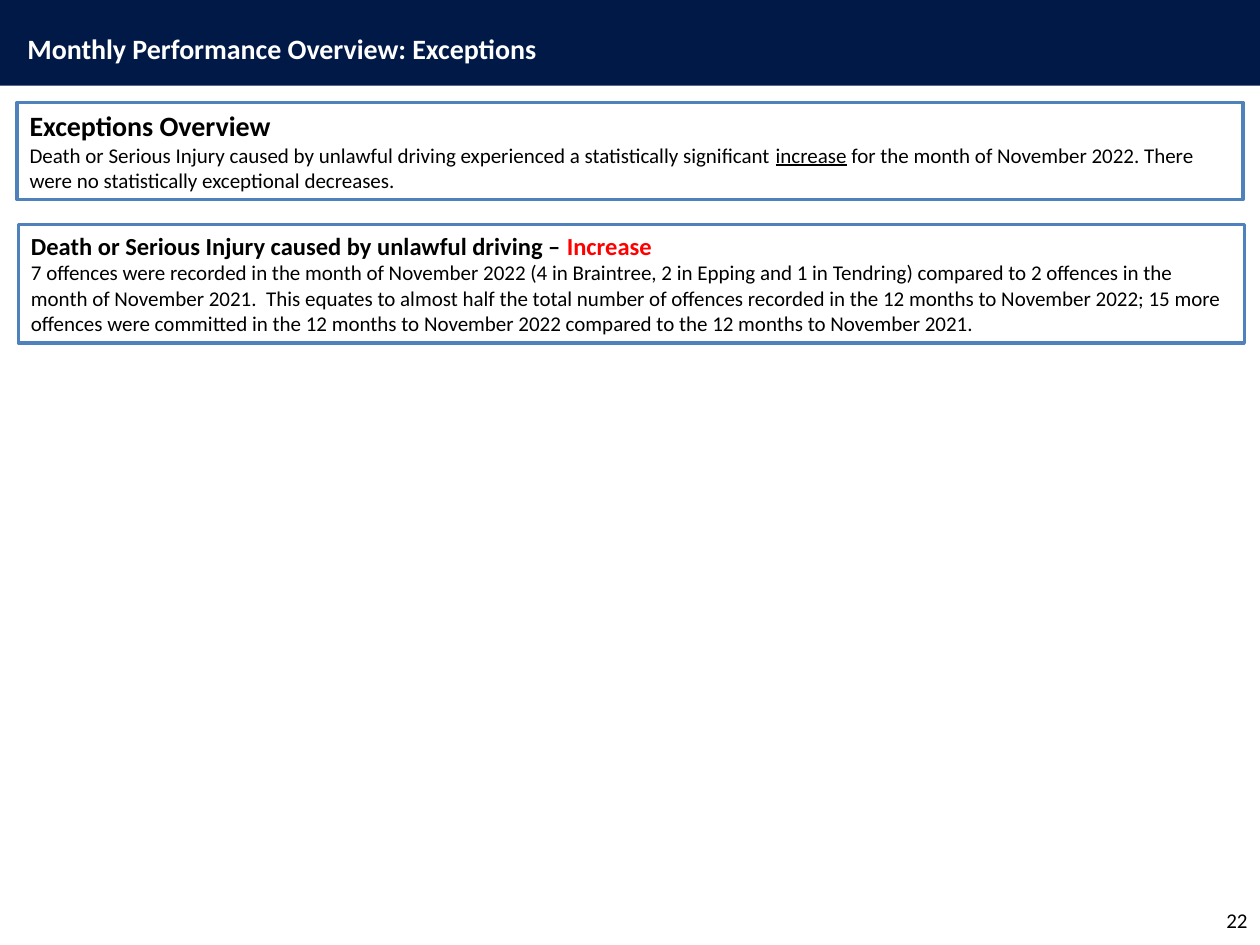
from dataclasses import dataclass

from pptx import Presentation
from pptx.dml.color import RGBColor
from pptx.enum.shapes import MSO_SHAPE
from pptx.enum.text import MSO_ANCHOR, PP_ALIGN
from pptx.util import Pt

RECT = MSO_SHAPE.RECTANGLE
TOP, MIDDLE = MSO_ANCHOR.TOP, MSO_ANCHOR.MIDDLE
LEFT, RIGHT = PP_ALIGN.LEFT, PP_ALIGN.RIGHT


@dataclass(frozen=True)
class Theme:
    font: str = "Calibri"
    navy: RGBColor = RGBColor(0x00, 0x19, 0x47)
    border: RGBColor = RGBColor(0x4F, 0x81, 0xBD)
    white: RGBColor = RGBColor(0xFF, 0xFF, 0xFF)
    black: RGBColor = RGBColor(0x00, 0x00, 0x00)
    red: RGBColor = RGBColor(0xFF, 0x00, 0x00)
    title: int = 16
    heading: int = 14
    body: int = 12
    border_width: int = 2


THEME = Theme()


def write(shape, paragraphs, align=LEFT, anchor=TOP):
    """Fill a shape with paragraphs, each a list of (text, size, format) runs."""
    tf = shape.text_frame
    tf.word_wrap = True
    tf.vertical_anchor = anchor
    for i, runs in enumerate(paragraphs):
        p = tf.paragraphs[0] if i == 0 else tf.add_paragraph()
        p.alignment = align
        for text, size, fmt in runs:
            r = p.add_run()
            r.text = text
            values = {"name": THEME.font, "size": Pt(size), "bold": False} | fmt
            r.font.color.rgb = values.pop("color", THEME.black)
            for name, value in values.items():
                setattr(r.font, name, value)


def add_rect(s, box, fill, line=None):
    sp = s.shapes.add_shape(RECT, *map(Pt, box))
    sp.shadow.inherit = False
    sp.fill.solid()
    sp.fill.fore_color.rgb = fill
    if line is None:
        sp.line.fill.background()
    else:
        sp.line.color.rgb = line
        sp.line.width = Pt(THEME.border_width)
    return sp


def add_text(s, box, paragraphs, **layout):
    write(s.shapes.add_textbox(*map(Pt, box)), paragraphs, **layout)


def add_panel(s, box, paragraphs):
    write(add_rect(s, box, THEME.white, THEME.border), paragraphs)


def main():
    prs = Presentation()
    prs.slide_width, prs.slide_height = Pt(720), Pt(540)
    s = prs.slides.add_slide(prs.slide_layouts[6])
    t = THEME
    bold = {"bold": True}

    add_rect(s, (0, -5, 720, 54), t.navy)
    add_text(s, (8.6, 14.4, 408, 26.6), [
        [("Monthly Performance Overview: Exceptions", t.title,
          bold | {"color": t.white})],
    ])
    add_text(s, (552, 511, 168, 29), [[("22", t.body, {})]],
             align=RIGHT, anchor=MIDDLE)

    add_panel(s, (9.8, 58.5, 700.5, 55.6), [
        [("Exceptions Overview", t.title, bold)],
        [("Death or Serious Injury caused by unlawful driving experienced a "
          "statistically significant ", t.body, {}),
         ("increase", t.body, {"underline": True}),
         (" for the month of November 2022. There were no statistically "
          "exceptional decreases.", t.body, {})],
    ])
    add_panel(s, (10.6, 128.2, 700.5, 67.8), [
        [("Death or Serious Injury caused by unlawful driving – ",
          t.heading, bold),
         ("Increase", t.heading, bold | {"color": t.red})],
        [("7 offences were recorded in the month of November 2022 (4 in "
          "Braintree, 2 in Epping and 1 in Tendring) compared to 2 offences "
          "in the month of November 2021.  This equates to almost half the "
          "total number of offences recorded in the 12 months to November "
          "2022; 15 more offences were committed in the 12 months to November "
          "2022 compared to the 12 months to November 2021.", t.body, {})],
    ])

    prs.save("out.pptx")


if __name__ == "__main__":
    main()
